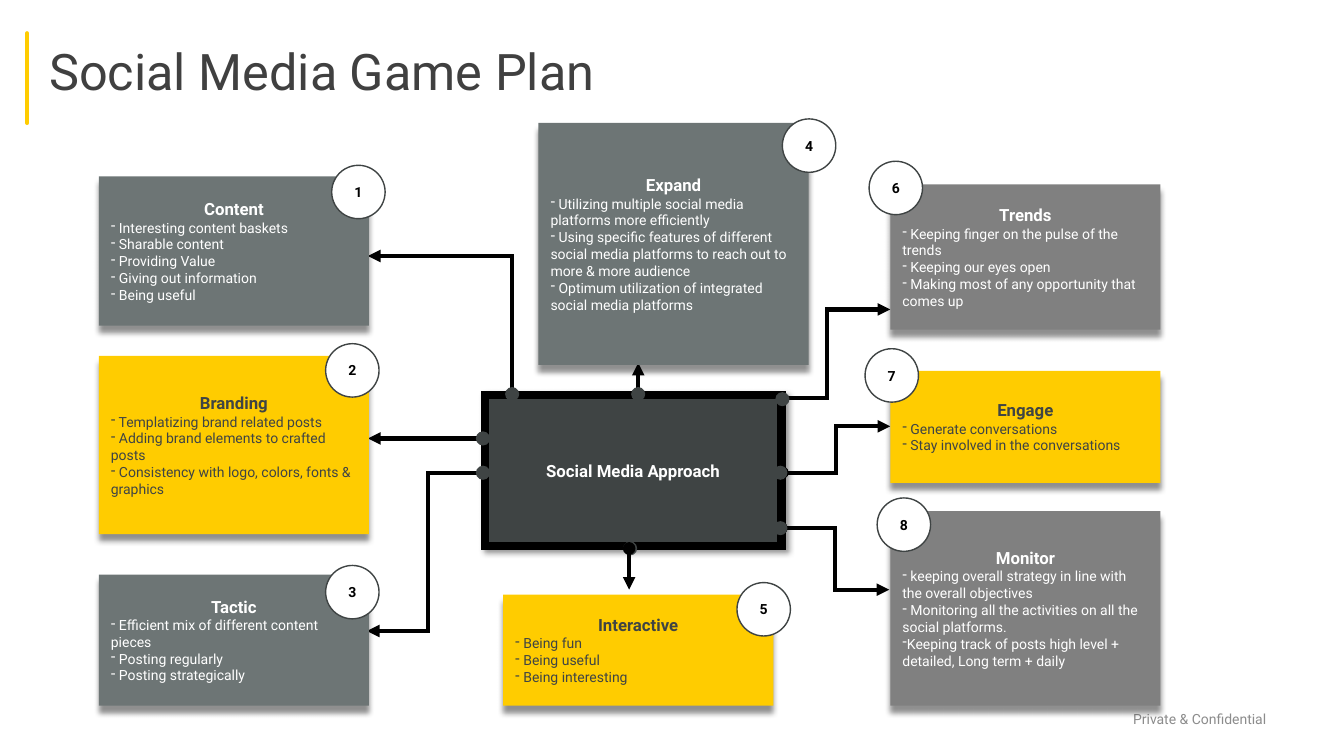
from dataclasses import dataclass

from lxml.etree import SubElement
from pptx import Presentation
from pptx.dml.color import RGBColor
from pptx.enum.shapes import MSO_CONNECTOR as Link, MSO_SHAPE as Shape
from pptx.enum.text import MSO_ANCHOR as Anchor, PP_ALIGN as Align
from pptx.oxml.ns import qn
from pptx.util import Inches, Pt


@dataclass(frozen=True)
class Theme:
    font: str = "Roboto"
    yellow: str = "FFCC00"
    slate: str = "6D7575"
    gray: str = "808080"
    dark: str = "3F4444"
    black: str = "000000"
    white: str = "FFFFFF"
    title_color: str = "404040"
    footer_color: str = "8C8C8C"
    title_size: int = 36
    heading_size: int = 12
    body_size: int = 10


THEME = Theme()
CARD_WIDTH = 2.68
BADGE_SIZE = 0.53
DOT_SIZE = 0.14
CARD_SHADOW = {"blur": 4, "dist": 5, "angle": 90, "alpha": 43}
HUB_SHADOW = {"blur": 4, "dist": 3, "angle": 45, "alpha": 40}
LEFT, RIGHT = 0.98, 8.83

# left, top, height, fill, badge left, badge top, heading, bullet texts
CARDS = [
    (LEFT, 1.75, 1.48, THEME.slate, 3.29, 1.64, "Content",
     [" Interesting content baskets", " Sharable content", " Providing Value",
      " Giving out information", " Being useful"]),
    (LEFT, 3.53, 1.77, THEME.yellow, 3.23, 3.41, "Branding",
     [" Templatizing brand related posts", " Adding brand elements to crafted posts",
      " Consistency with logo, colors, fonts & graphics"]),
    (LEFT, 5.7, 1.3, THEME.slate, 3.23, 5.61, "Tactic",
     [" Efficient mix of different content pieces", " Posting regularly",
      " Posting strategically"]),
    (5.34, 1.22, 2.4, THEME.slate, 7.76, 1.18, "Expand",
     [" Utilizing multiple social media platforms more efficiently",
      " Using specific features of different social media platforms"
      " to reach out to more & more audience",
      " Optimum utilization of integrated social media platforms"]),
    (4.99, 5.9, 1.1, THEME.yellow, 7.31, 5.78, "Interactive",
     [" Being fun", " Being useful", " Being interesting"]),
    (RIGHT, 1.83, 1.44, THEME.gray, 8.62, 1.6, "Trends",
     [" Keeping finger on the pulse of the trends", " Keeping our eyes open",
      " Making most of any opportunity that comes up"]),
    (RIGHT, 3.68, 1.11, THEME.yellow, 8.58, 3.46, "Engage",
     [" Generate conversations", " Stay involved in the conversations"]),
    (RIGHT, 5.07, 1.93, THEME.gray, 8.7, 4.94, "Monitor",
     [" keeping overall strategy in line with the overall objectives",
      " Monitoring all the activities on all the social platforms.",
      "Keeping track of posts high level + detailed, Long term + daily"]),
]
ELBOW_ARROWS = [
    ((7.76, 4.69), (8.83, 4.23)),
    ((7.75, 5.24), (8.82, 5.85)),
    ((4.85, 4.69), (3.64, 6.26)),
    ((7.58, 3.95), (8.83, 3.07)),
]
STRAIGHT_ARROWS = [((4.81, 4.35), (3.65, 4.35)), ((6.33, 4.01), (6.33, 3.6))]
DOT_CENTERS = [(6.33, 3.91), (7.76, 3.96), (7.74, 4.69), (7.74, 5.24),
               (4.79, 4.35), (5.08, 3.91), (4.79, 4.69), (6.25, 5.44)]


class SlidePainter:
    def __init__(self, page, theme):
        self.page = page
        self.theme = theme

    def add_span(self, para, text, size, color, bold=False):
        span = para.add_run()
        span.text = text
        font_values = {"name": self.theme.font, "size": Pt(size), "bold": bold}
        for name, value in font_values.items():
            setattr(span.font, name, value)
        span.font.color.rgb = RGBColor.from_string(color)

    def frame(self, box, margins):
        """Set wrapping, middle anchoring and (horizontal, vertical) margins."""
        across, down = map(Inches, margins)
        frame_values = {"word_wrap": True, "vertical_anchor": Anchor.MIDDLE,
                        "margin_left": across, "margin_right": across,
                        "margin_top": down, "margin_bottom": down}
        for name, value in frame_values.items():
            setattr(box.text_frame, name, value)
        return box.text_frame

    def label(self, area, text, size, color, spacing=1.0):
        box = self.page.shapes.add_textbox(*map(Inches, area))
        para = self.frame(box, (0.1, 0.05)).paragraphs[0]
        para.line_spacing = spacing
        self.add_span(para, text, size, color)

    def block(self, kind, area, fill, line=None, shadow=None):
        """Add a filled shape; line is (colour, points)."""
        box = self.page.shapes.add_shape(kind, *map(Inches, area))
        box.fill.solid()
        box.fill.fore_color.rgb = RGBColor.from_string(fill)
        if line:
            box.line.color.rgb = RGBColor.from_string(line[0])
            box.line.width = Pt(line[1])
            SubElement(box.line._get_or_add_ln(), qn("a:miter"), lim="800000")
        else:
            box.line.fill.background()
        box.shadow.inherit = False
        if shadow:
            effects = box._element.spPr.find(qn("a:effectLst"))
            outer = SubElement(effects, qn("a:outerShdw"), algn="t", rotWithShape="0",
                               blurRad=str(Pt(shadow["blur"])),
                               dist=str(Pt(shadow["dist"])),
                               dir=str(shadow["angle"] * 60000))
            color = SubElement(outer, qn("a:srgbClr"), val=self.theme.black)
            SubElement(color, qn("a:alpha"), val=str(shadow["alpha"] * 1000))
        return box

    def headed(self, box, heading, size, color):
        """Put a bold centred first paragraph in the shape."""
        frame = self.frame(box, (0.12, 0.06))
        frame.paragraphs[0].alignment = Align.CENTER
        self.add_span(frame.paragraphs[0], heading, size, color, bold=True)
        return frame

    def card(self, area, fill, heading, bullets):
        theme = self.theme
        color = theme.dark if fill == theme.yellow else theme.white
        box = self.block(Shape.RECTANGLE, area, fill, shadow=CARD_SHADOW)
        frame = self.headed(box, heading, theme.heading_size, color)
        for text in bullets:
            para = frame.add_paragraph()
            para.alignment = Align.LEFT
            SubElement(para._p.get_or_add_pPr(), qn("a:buChar"), char="-")
            self.add_span(para, text, theme.body_size, color)

    def hub(self, area, text):
        box = self.block(Shape.RECTANGLE, area, self.theme.dark,
                         (self.theme.black, 6), HUB_SHADOW)
        self.headed(box, text, self.theme.heading_size, self.theme.white)

    def dot(self, x, y):
        area = (x - DOT_SIZE / 2, y - DOT_SIZE / 2, DOT_SIZE, DOT_SIZE)
        self.block(Shape.OVAL, area, self.theme.dark)

    def badge(self, left, top, number):
        box = self.block(Shape.OVAL, (left, top, BADGE_SIZE, BADGE_SIZE),
                         self.theme.white, (self.theme.dark, 1))
        self.headed(box, str(number), self.theme.body_size, self.theme.black)

    def connector(self, start, end, color, kind=Link.STRAIGHT, ends=()):
        """Draw a 3 pt line; ends names the head and tail decorations."""
        link = self.page.shapes.add_connector(kind, *map(Inches, start + end))
        link.line.color.rgb = RGBColor.from_string(color)
        link.line.width = Pt(3)
        outline = link.line._get_or_add_ln()
        if ends:
            SubElement(outline, qn("a:miter"), lim="800000")
            for tag, decoration in zip(("a:headEnd", "a:tailEnd"), ends):
                SubElement(outline, qn(tag), type=decoration)
        else:
            outline.set("cap", "rnd")
        SubElement(link._element.spPr, qn("a:effectLst"))
        return link

    def arrow(self, start, end, kind=Link.STRAIGHT):
        self.connector(start, end, self.theme.black, kind, ("oval", "triangle"))

    def corner_arrow(self, tip, root):
        """Draw an arrow with one bend, level at its tip and upright at its root."""
        link = self.connector(tip, root, self.theme.black, Link.ELBOW, ("triangle", "oval"))
        link._element.spPr.find(qn("a:prstGeom")).set("prst", "bentConnector2")


def main():
    deck = Presentation()
    deck.slide_width, deck.slide_height = Inches(13.33), Inches(7.5)
    painter = SlidePainter(deck.slides.add_slide(deck.slide_layouts[6]), THEME)

    painter.connector((0.27, 0.33), (0.27, 1.22), THEME.yellow)
    painter.label((11.14, 7, 1.59, 0.27), "Private & Confidential",
                  THEME.body_size, THEME.footer_color)
    painter.label((0.39, 0.29, 9.42, 0.9), "Social Media Game Plan",
                  THEME.title_size, THEME.title_color, 0.9)

    for start, end in ELBOW_ARROWS:
        painter.arrow(start, end, Link.ELBOW)
    for start, end in STRAIGHT_ARROWS:
        painter.arrow(start, end)
    painter.corner_arrow((3.65, 2.54), (5.08, 4.14))

    for left, top, height, fill, _, _, heading, bullets in CARDS:
        painter.card((left, top, CARD_WIDTH, height), fill, heading, bullets)
    painter.hub((4.81, 3.92, 2.94, 1.5), "Social Media Approach")
    for center in DOT_CENTERS:
        painter.dot(*center)
    painter.arrow((6.24, 5.44), (6.24, 5.85))
    for number, card in enumerate(CARDS, 1):
        painter.badge(card[4], card[5], number)

    deck.save("out.pptx")


if __name__ == "__main__":
    main()
